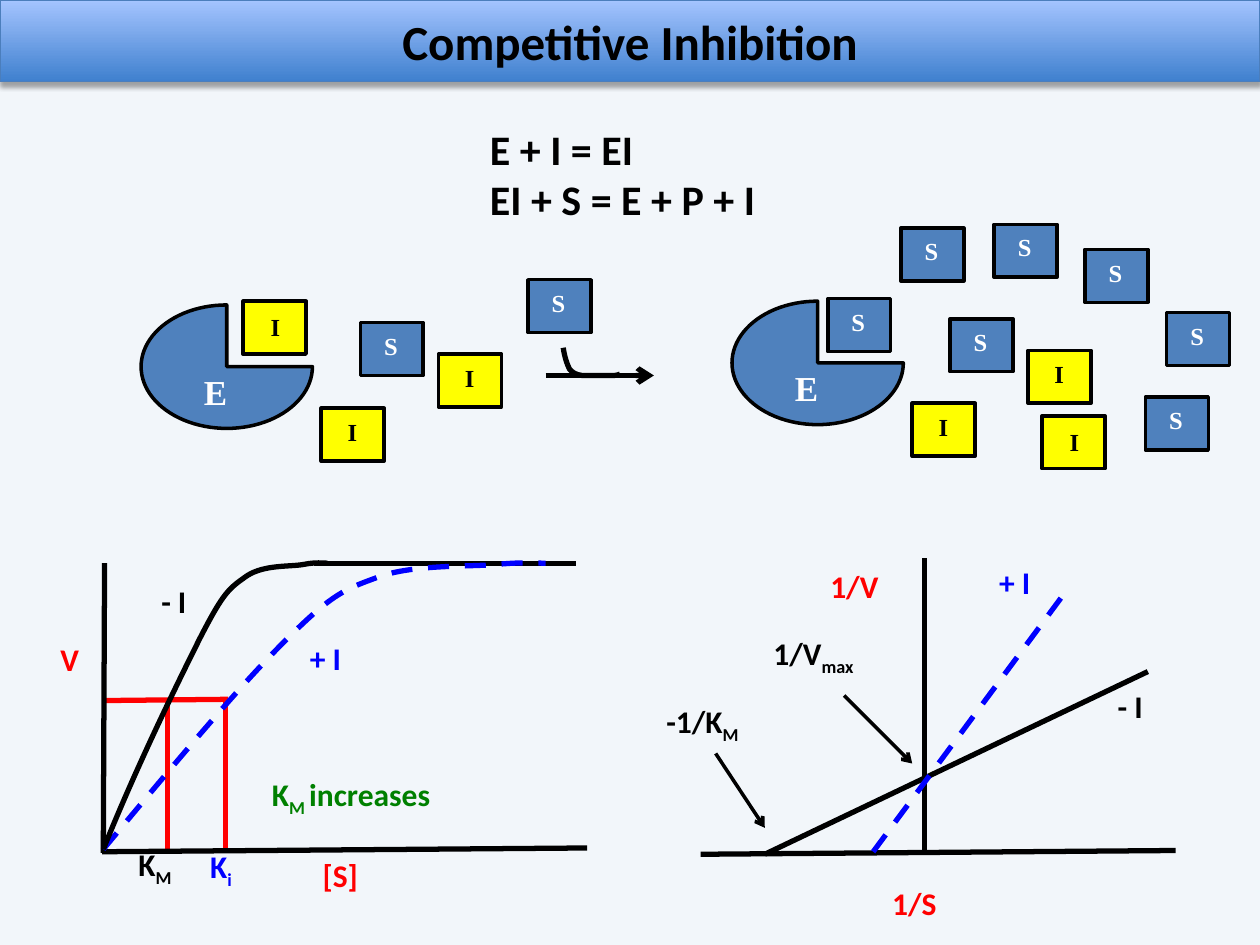
from lxml import etree
from pptx import Presentation
from pptx.dml.color import RGBColor
from pptx.enum import dml, shapes, text
from pptx.oxml import ns
from pptx.util import Inches, Pt

BLACK, WHITE, RED, BLUE, GREEN = "000000", "FFFFFF", "FF0000", "0000FF", "008000"
ENZYME_BLUE, YELLOW = "4F81BD", "FFFF00"
SERIF = "Times New Roman"


def rgb(code):
    return RGBColor.from_string(code)


def style_line(line, color, width, dashed=False):
    line.color.rgb = rgb(color)
    line.width = Pt(width)
    if dashed:
        line.dash_style = dml.MSO_LINE.DASH


def add_run(paragraph, wording, size, color, font="Calibri", subscript=False):
    run = paragraph.add_run()
    run.text = wording
    run.font.name, run.font.size, run.font.bold = font, Pt(size), True
    run.font.color.rgb = rgb(color)
    if subscript:
        run._r.get_or_add_rPr().set("baseline", "-25000")


def add_label(slide, box, wording, color, size=18, font="Calibri", sub="", after="", inset=None):
    """One-line label: wording, then a subscript, then text back on the baseline."""
    frame = slide.shapes.add_textbox(*map(Inches, box)).text_frame
    frame.word_wrap = False
    frame.auto_size = text.MSO_AUTO_SIZE.SHAPE_TO_FIT_TEXT
    if inset is not None:
        frame.margin_left = frame.margin_right = Inches(inset)
        frame.margin_top = frame.margin_bottom = Inches(inset)
    for part, lowered in ((wording, False), (sub, True), (after, False)):
        if part:
            add_run(frame.paragraphs[0], part, size, color, font, lowered)


def add_line(slide, start, end, color=BLACK, width=3, dashed=False, arrow=False):
    connector = slide.shapes.add_connector(
        shapes.MSO_CONNECTOR.STRAIGHT, *map(Inches, (*start, *end)))
    style_line(connector.line, color, width, dashed)
    if arrow:
        tail = etree.SubElement(connector.line._get_or_add_ln(), ns.qn("a:tailEnd"))
        tail.set("type", "arrow")
    etree.SubElement(connector._element.spPr, ns.qn("a:effectLst"))


def add_curve(slide, points, color=BLACK, dashed=False):
    """Chain of cubic Bezier segments: start, then two controls and an end each."""
    builder = slide.shapes.build_freeform(*map(Inches, points[0]))
    builder.add_line_segments([tuple(map(Inches, p)) for p in points[1:]], close=False)
    curve = builder.convert_to_shape()
    # Turn every three straight steps into one Bezier segment
    outline = next(curve._element.iter(ns.qn("a:path")))
    steps = outline.findall(ns.qn("a:lnTo"))
    for i in range(0, len(steps), 3):
        bezier = etree.SubElement(outline, ns.qn("a:cubicBezTo"))
        for step in steps[i:i + 3]:
            bezier.append(step[0])
            outline.remove(step)
    curve.shadow.inherit = False
    curve.fill.background()
    style_line(curve.line, color, 3, dashed)


def add_filled(slide, kind, box, color):
    shape = slide.shapes.add_shape(kind, *map(Inches, box))
    shape.shadow.inherit = False
    shape.fill.solid()
    shape.fill.fore_color.rgb = rgb(color)
    style_line(shape.line, BLACK, 2)


def add_substrate(slide, x, y):
    add_filled(slide, shapes.MSO_SHAPE.RECTANGLE, (x, y, 0.5, 0.42), ENZYME_BLUE)
    add_label(slide, (x + 0.09, y + 0.015, 0.3, 0.34), "S", WHITE, 14, SERIF)


def add_inhibitor(slide, x, y, dx=0.11, dy=0.02):
    add_filled(slide, shapes.MSO_SHAPE.RECTANGLE, (x, y, 0.5, 0.42), YELLOW)
    add_label(slide, (x + dx, y + dy, 0.42, 0.57), "I", BLACK, 14, SERIF)


def add_enzyme(slide, x, y):
    add_filled(slide, shapes.MSO_SHAPE.PIE, (x, y, 1.36, 0.98), ENZYME_BLUE)
    add_label(slide, (x + 0.4, y + 0.47, 0.4, 0.44), "E", WHITE, 20, SERIF)


def add_title(slide):
    banner = slide.shapes.add_shape(
        shapes.MSO_SHAPE.RECTANGLE, 0, 0, Inches(10), Inches(0.65))
    banner.fill.gradient()
    banner.fill.gradient_angle = 90
    for stop, color in zip(banner.fill.gradient_stops, ("3F80CE", "A4C4FF")):
        stop.color.rgb = rgb(color)
    style_line(banner.line, "4B7EBC", 0.75)
    # Soft shadow below the banner
    banner.shadow.inherit = False
    effects = banner._element.spPr.find(ns.qn("a:effectLst"))
    shadow = etree.SubElement(effects, ns.qn("a:outerShdw"), blurRad=str(Pt(3.1)),
                              dist=str(Pt(1.8)), dir="5400000", rotWithShape="0")
    tint = etree.SubElement(shadow, ns.qn("a:srgbClr"), val=BLACK)
    etree.SubElement(tint, ns.qn("a:alpha"), val="35000")
    frame = banner.text_frame
    frame.vertical_anchor = text.MSO_ANCHOR.MIDDLE
    frame.paragraphs[0].alignment = text.PP_ALIGN.CENTER
    add_run(frame.paragraphs[0], "Competitive Inhibition", 28, BLACK)


def add_equations(slide):
    frame = slide.shapes.add_textbox(*map(Inches, (3.79, 0.52, 2.76, 1.31))).text_frame
    frame.word_wrap = True
    frame.vertical_anchor = text.MSO_ANCHOR.BOTTOM
    add_run(frame.paragraphs[0], "E + I = EI", 24, BLACK)
    add_run(frame.add_paragraph(), "EI + S = E + P + I", 24, BLACK)


def add_reaction(slide):
    for x, y in ((1.12, 2.42), (5.81, 2.39)):
        add_enzyme(slide, x, y)
    # Before: inhibitor bound; after: excess substrate displaces it
    for x, y in ((2.86, 2.56), (4.19, 2.22), (6.57, 2.37), (7.54, 2.53), (7.15, 1.81),
                 (7.89, 1.78), (8.61, 1.98), (9.26, 2.48), (9.09, 3.15)):
        add_substrate(slide, x, y)
    for x, y in ((3.48, 2.81), (2.55, 3.24), (8.16, 2.78), (7.24, 3.2)):
        add_inhibitor(slide, x, y)
    for x, y in ((1.93, 2.39), (8.27, 3.3)):
        add_inhibitor(slide, x, y, 0.12, 0.04)
    # Reaction arrow with the joining substrate
    add_line(slide, (4.33, 2.98), (5.19, 2.98), arrow=True)
    add_curve(slide, [(4.47, 2.76), (4.48, 2.83), (4.5, 2.89), (4.52, 2.93),
                      (4.55, 2.96), (4.56, 2.97), (4.62, 2.98), (4.67, 2.98),
                      (4.79, 2.98), (4.84, 2.98), (4.89, 2.98), (4.9, 2.98), (4.92, 2.97)])


def add_saturation_plot(slide):
    # Half-maximal velocity guides
    for x in (1.33, 1.79):
        add_line(slide, (x, 5.56), (x, 6.76), RED)
    add_line(slide, (0.83, 5.56), (1.81, 5.55), RED)
    # Axes and plateau
    add_line(slide, (2.49, 4.47), (4.57, 4.47))
    add_line(slide, (0.83, 4.47), (0.82, 6.77))
    add_line(slide, (0.81, 6.76), (4.66, 6.73))
    # Velocity curves with and without inhibitor
    add_curve(slide, [(0.82, 6.74), (1.37, 6.08), (1.92, 5.42), (2.29, 5.06),
                      (2.66, 4.69), (2.76, 4.67), (3.03, 4.57), (3.31, 4.48),
                      (3.72, 4.5), (3.94, 4.48), (4.15, 4.46), (4.24, 4.47), (4.33, 4.47)],
              BLUE, dashed=True)
    add_curve(slide, [(0.82, 6.74), (1.09, 6.07), (1.41, 5.42), (1.59, 5.06),
                      (1.78, 4.69), (1.82, 4.67), (1.96, 4.57), (2.1, 4.48),
                      (2.3, 4.5), (2.41, 4.48), (2.51, 4.46), (2.56, 4.47), (2.6, 4.47)])
    for box, wording, color in (((0.44, 5.04, 0.46, 0.53), "V", RED),
                                ((2.52, 6.75, 0.51, 0.53), "[S]", RED),
                                ((2.42, 5.03, 0.47, 0.53), "+ I", BLUE),
                                ((1.24, 4.58, 0.4, 0.53), "- I", BLACK)):
        add_label(slide, box, wording, color, inset=0.04)
    add_label(slide, (1, 6.66, 0.67, 0.55), "K", BLACK, sub="M")
    add_label(slide, (1.57, 6.67, 0.53, 0.55), "K", BLUE, sub="i")
    add_label(slide, (2.06, 6.1, 2.07, 0.55), "K", GREEN, sub="M ", after="increases")


def add_reciprocal_plot(slide):
    # Axes
    add_line(slide, (5.56, 6.78), (9.33, 6.75))
    add_line(slide, (7.34, 4.43), (7.34, 6.75))
    # Lines without and with inhibitor
    add_line(slide, (6.07, 6.78), (9.11, 5.33))
    add_line(slide, (6.93, 6.76), (8.44, 4.72), BLUE, dashed=True)
    for box, wording, color in (((6.55, 4.46, 0.64, 0.57), "1/V", RED),
                                ((7.04, 6.98, 0.59, 0.57), "1/S", RED),
                                ((7.89, 4.43, 0.45, 0.57), "+ I", BLUE),
                                ((8.83, 5.41, 0.39, 0.57), "- I", BLACK)):
        add_label(slide, box, wording, color, inset=0.04)
    # Intercepts
    add_line(slide, (5.68, 5.98), (6.07, 6.57), width=2, arrow=True)
    add_label(slide, (5.19, 5.52, 0.8, 0.4), "-1/K", BLACK, sub="M")
    add_line(slide, (6.7, 5.52), (7.24, 6.06), width=2, arrow=True)
    add_label(slide, (6.04, 4.98, 0.89, 0.4), "1/V", BLACK, sub="max")


def main():
    deck = Presentation()
    deck.slide_width, deck.slide_height = Inches(10), Inches(7.5)
    slide = deck.slides.add_slide(deck.slide_layouts[6])
    slide.background.fill.solid()
    slide.background.fill.fore_color.rgb = rgb("F2F6FA")
    add_reciprocal_plot(slide)
    add_saturation_plot(slide)
    add_equations(slide)
    add_title(slide)
    add_reaction(slide)
    deck.save("out.pptx")


if __name__ == "__main__":
    main()
